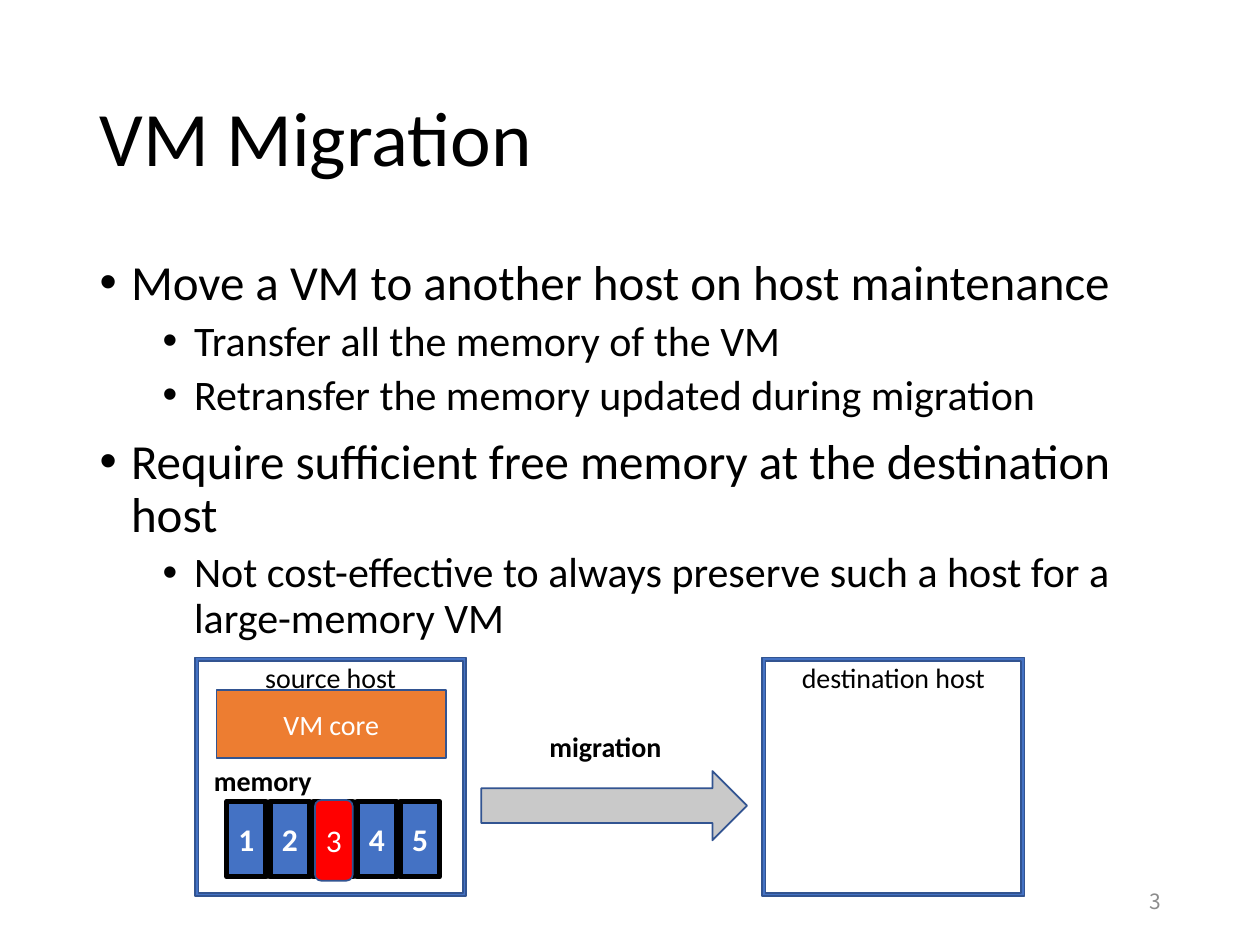
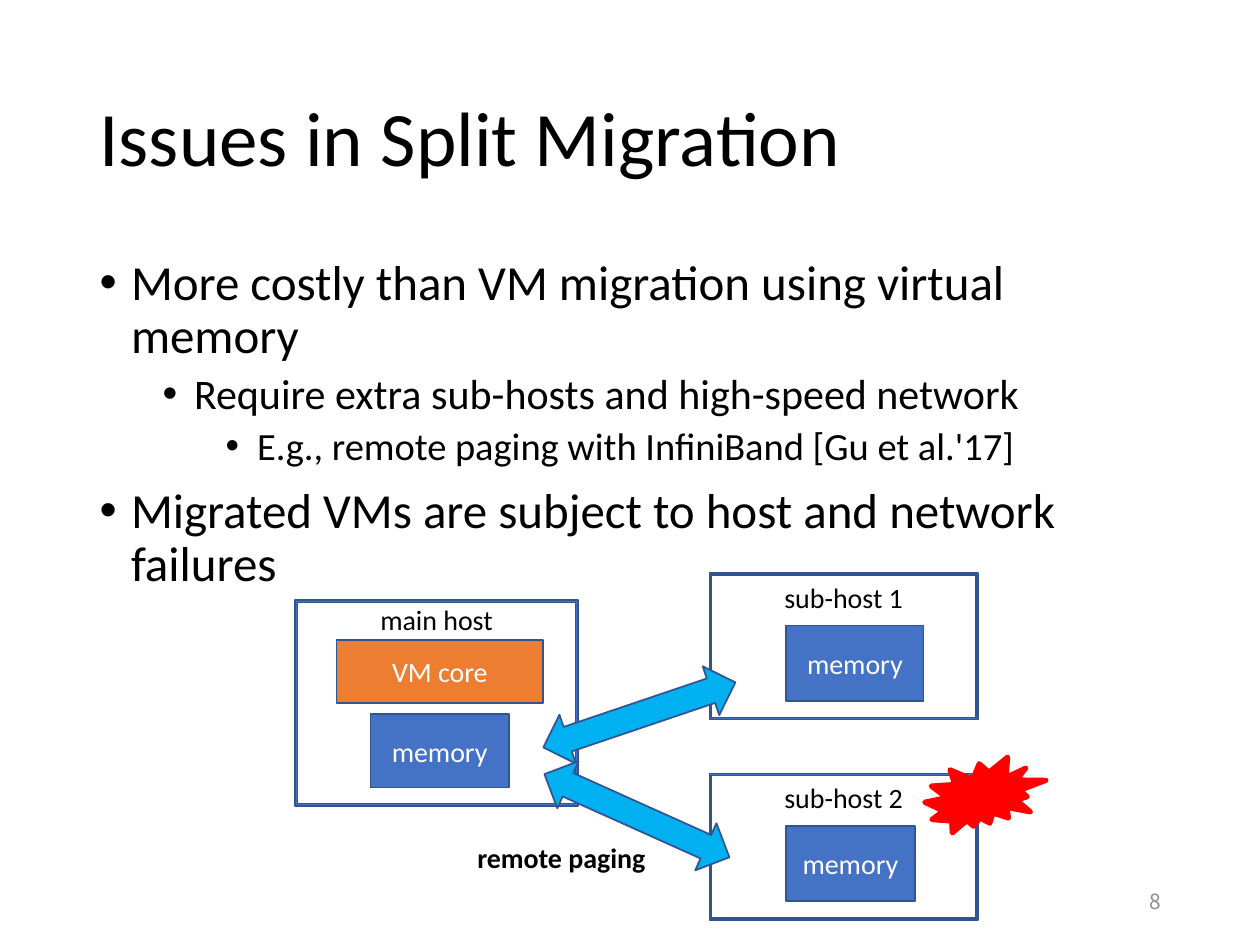
import pptx
import pptx.util
import pptx.dml.color
import pptx.enum.shapes
import pptx.enum.text
from lxml import etree

Pt = pptx.util.Pt
RGBColor = pptx.dml.color.RGBColor
SHAPE = pptx.enum.shapes.MSO_SHAPE
ALIGN = pptx.enum.text.PP_ALIGN
ANCHOR = pptx.enum.text.MSO_ANCHOR
AUTO_SIZE = pptx.enum.text.MSO_AUTO_SIZE

BLACK = RGBColor(0x00, 0x00, 0x00)
WHITE = RGBColor(0xFF, 0xFF, 0xFF)
GREY = RGBColor(0x8C, 0x8C, 0x8C)
SILVER = RGBColor(0xC9, 0xC9, 0xC9)
BLUE = RGBColor(0x44, 0x72, 0xC4)
NAVY = RGBColor(0x32, 0x54, 0x91)
SKY = RGBColor(0x00, 0xB0, 0xF0)
ORANGE = RGBColor(0xED, 0x7D, 0x31)
RED = RGBColor(0xFF, 0x00, 0x00)

FONT = "Calibri"
NUMBER_FONT = "Noto Sans CJK JP"
LEVEL_SIZES = (28, 24, 22)
TITLE_BOX = (49.68, 28.8, 620.64, 104.4)
BODY_BOX = (49.68, 144, 620.64, 342.72)
NUMBER_BOX = (508.32, 500.4, 162, 28.8)


def inside(box, x, y, w, h):
    """Turn a place relative to the box's corner into a slide place."""
    return box[0] + x, box[1] + y, w, h


def place(sp, box):
    sp.left, sp.top, sp.width, sp.height = map(Pt, box)


def add_run(p, text, size, color=BLACK, bold=False, font=FONT):
    r = p.add_run()
    r.text = text
    r.font.name = font
    r.font.size = Pt(size)
    r.font.bold = bold
    r.font.color.rgb = color


def add_label(s, box, text, size=16, color=BLACK, bold=True, align=ALIGN.LEFT,
              anchor=ANCHOR.TOP, font=FONT):
    tf = s.shapes.add_textbox(*map(Pt, box)).text_frame
    tf.word_wrap = True
    tf.vertical_anchor = anchor
    p = tf.paragraphs[0]
    p.alignment = align
    add_run(p, text, size, color, bold, font)


def add_box(s, kind, box, fill, line=NAVY, line_width=1, text="", size=16,
            color=WHITE, bold=False, anchor=ANCHOR.MIDDLE, top_inset=0):
    sp = s.shapes.add_shape(kind, *map(Pt, box))
    sp.shadow.inherit = False
    if fill is None:
        sp.fill.background()
    else:
        sp.fill.solid()
        sp.fill.fore_color.rgb = fill
    sp.line.color.rgb = line
    sp.line.width = Pt(line_width)
    if text:
        tf = sp.text_frame
        tf.word_wrap = True
        tf.vertical_anchor = anchor
        tf.margin_left = tf.margin_right = tf.margin_bottom = 0
        tf.margin_top = Pt(top_inset)
        p = tf.paragraphs[0]
        p.alignment = ALIGN.CENTER
        add_run(p, text, size, color, bold)
    return sp


def set_bullet(p, level):
    pPr = p._p.get_or_add_pPr()
    pPr.set("marL", str(Pt(18 + 36 * level)))
    pPr.set("indent", str(-Pt(18)))
    ns = pptx.oxml.ns.qn
    etree.SubElement(pPr, ns("a:buFont")).set("typeface", "Arial")
    etree.SubElement(pPr, ns("a:buChar")).set("char", "•")


def add_slide(prs, title, bullets, number):
    """Add a slide with title, (level, text) bullets and slide number."""
    s = prs.slides.add_slide(prs.slide_layouts[1])
    place(s.shapes.title, TITLE_BOX)
    tf = s.shapes.title.text_frame
    tf.auto_size = AUTO_SIZE.NONE
    tf.vertical_anchor = ANCHOR.MIDDLE
    p = tf.paragraphs[0]
    p.alignment = ALIGN.LEFT
    p.line_spacing = 0.9
    add_run(p, title, 44)

    body = s.placeholders[1]
    place(body, BODY_BOX)
    tf = body.text_frame
    tf.auto_size = AUTO_SIZE.NONE
    for i, (level, text) in enumerate(bullets):
        p = tf.add_paragraph() if i else tf.paragraphs[0]
        p.level = level
        p.line_spacing = 0.9
        p.space_before = Pt(5 if level else 10)
        set_bullet(p, level)
        add_run(p, text, LEVEL_SIZES[level])

    add_label(s, NUMBER_BOX, number, 12, GREY, False, ALIGN.RIGHT,
              ANCHOR.MIDDLE, NUMBER_FONT)
    return s


def add_host(s, box, name, top_inset=0):
    sp = add_box(s, SHAPE.FRAME, box, BLUE, text=name, color=BLACK,
                 anchor=ANCHOR.TOP, top_inset=top_inset)
    sp.adjustments[0] = 0.013


def add_source_host(s, box):
    add_host(s, box, "source host")
    add_box(s, SHAPE.RECTANGLE, inside(box, 12.2, 18.7, 131, 38.9), ORANGE,
            text="VM core")
    add_label(s, inside(box, 3.6, 56.9, 120.2, 26.6), "memory")
    add_box(s, SHAPE.ROUNDED_RECTANGLE, inside(box, 19.4, 82.1, 120.2, 43.2),
            None, BLACK, 2)
    for i in range(5):
        page = inside(box, 18 + 24.84 * i, 82.1, 22.3, 43.2)
        add_box(s, SHAPE.RECTANGLE, page, BLUE, BLACK, 3, str(i + 1), 18,
                bold=True)
    add_box(s, SHAPE.ROUNDED_RECTANGLE, inside(box, 68.4, 81.4, 21.6, 46.1),
            RED, text="3", size=18)


def add_migration_arrow(s, box):
    add_box(s, SHAPE.RIGHT_ARROW, box, SILVER)
    add_label(s, inside(box, -5, -27, box[2], 26.6), "migration",
              align=ALIGN.CENTER)


def add_main_host(s, box):
    add_host(s, box, "main host")
    add_box(s, SHAPE.RECTANGLE, inside(box, 23.8, 23, 118.1, 36), ORANGE,
            text="VM core")
    add_box(s, SHAPE.RECTANGLE, inside(box, 43.2, 65.5, 79.2, 41.8), BLUE,
            text="memory")


def add_sub_host(s, box, name, memory_width):
    add_host(s, box, name, 3)
    add_box(s, SHAPE.RECTANGLE, inside(box, 43.9, 29.8, memory_width, 43.2),
            BLUE, text="memory")


def add_paging_arrow(s, box, angle):
    sp = add_box(s, SHAPE.LEFT_RIGHT_ARROW, box, SKY)
    sp.rotation = angle


def build_vm_migration(prs):
    s = add_slide(prs, "VM Migration", [
        (0, "Move a VM to another host on host maintenance"),
        (1, "Transfer all the memory of the VM"),
        (1, "Retransfer the memory updated during migration"),
        (0, "Require sufficient free memory at the destination host"),
        (1, "Not cost-effective to always preserve such a host for a "
            "large-memory VM"),
    ], "3")
    add_source_host(s, (111.6, 375.8, 154.8, 136.1))
    add_host(s, (435.6, 375.8, 149.8, 136.1), "destination host")
    add_migration_arrow(s, (275, 440.6, 151.9, 39.6))


def build_split_migration(prs):
    s = add_slide(prs, "Issues in Split Migration", [
        (0, "More costly than VM migration using virtual memory"),
        (1, "Require extra sub-hosts and high-speed network"),
        (2, "E.g., remote paging with InfiniBand [Gu et al.'17]"),
        (0, "Migrated VMs are subject to host and network failures"),
    ], "8")
    add_main_host(s, (168.5, 342.7, 162, 118.1))
    add_sub_host(s, (405.4, 327.6, 153.4, 83.5), "sub-host 1", 78.5)
    add_paging_arrow(s, (307.4, 393.8, 115.9, 29.5), 341.3)
    add_label(s, (265.7, 476.6, 129.6, 26.6), "remote paging")
    add_sub_host(s, (405.4, 442.1, 153.4, 83.5), "sub-host 2", 73.4)
    add_paging_arrow(s, (306, 451.4, 115.9, 29.5), 24.2)
    add_box(s, SHAPE.EXPLOSION2, (528.5, 432.7, 69.1, 43.2), RED, RED, 3)


def main():
    prs = pptx.Presentation()
    prs.slide_width, prs.slide_height = Pt(720), Pt(540)
    build_vm_migration(prs)
    build_split_migration(prs)
    prs.save("out.pptx")


if __name__ == "__main__":
    main()
